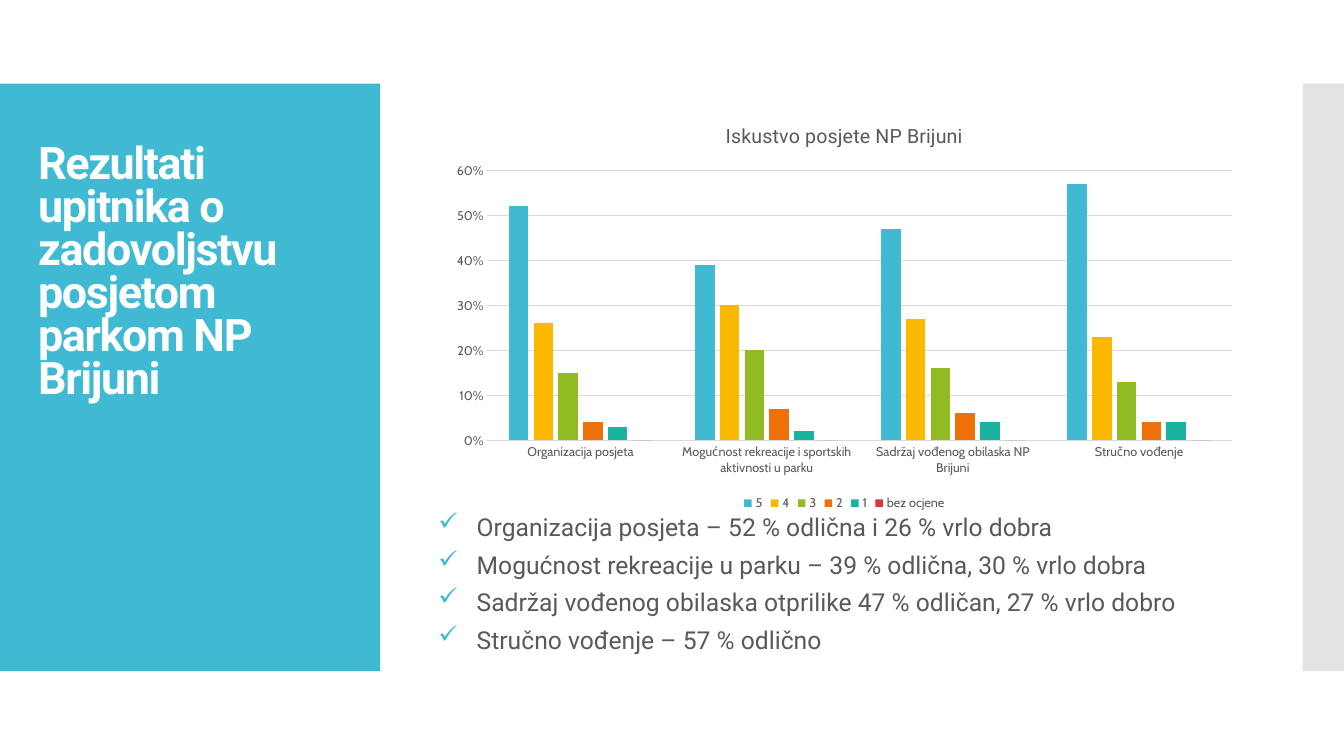
from dataclasses import dataclass

from lxml import etree
from pptx import Presentation
from pptx.chart import data as chart_data
from pptx.dml.color import RGBColor
from pptx.enum import chart as chart_enum, shapes, text
from pptx.oxml import ns
from pptx.util import Inches, Pt

COLORS = {
    "teal": "40BAD2", "yellow": "FAB900", "green": "90BB23", "orange": "EE7008",
    "sea": "1AB39F", "red": "D5393D", "edge": "C8C8C8", "grid": "D9D9D9",
    "body": "595959", "white": "FFFFFF", "black": "000000",
}


@dataclass(frozen=True)
class Panel:
    left: float
    width: float
    color: str
    alpha: int = 100


@dataclass(frozen=True)
class Rating:
    name: str
    shares: tuple[float, ...]
    color: str


PANELS = [Panel(0, 3.77, "teal"), Panel(12.92, 0.42, "edge", 50)]
TITLE = "Rezultati upitnika o zadovoljstvu posjetom parkom NP Brijuni"
TOPICS = [
    "Organizacija posjeta",
    "Mogućnost rekreacije i sportskih aktivnosti u parku",
    "Sadržaj vođenog obilaska NP Brijuni",
    "Stručno vođenje",
]
RATINGS = [
    Rating("5", (0.52, 0.39, 0.47, 0.57), "teal"),
    Rating("4", (0.26, 0.30, 0.27, 0.23), "yellow"),
    Rating("3", (0.15, 0.20, 0.16, 0.13), "green"),
    Rating("2", (0.04, 0.07, 0.06, 0.04), "orange"),
    Rating("1", (0.03, 0.02, 0.04, 0.04), "sea"),
    Rating("bez ocjene", (0, 0, 0, 0), "red"),
]
FINDINGS = [
    "Organizacija posjeta – 52 % odlična i 26 % vrlo dobra",
    "Mogućnost rekreacije u parku – 39 % odlična, 30 % vrlo dobra",
    "Sadržaj vođenog obilaska otprilike 47 % odličan, 27 % vrlo dobro",
    "Stručno vođenje – 57 % odlično",
]


def rgb(color: str) -> RGBColor:
    return RGBColor.from_string(COLORS[color])


def set_font(font, name: str, size: float, color: str, bold: bool = False) -> None:
    font.name, font.size, font.bold = name, Pt(size), bold
    font.color.rgb = rgb(color)


def add_panel(slide, panel: Panel) -> None:
    band = slide.shapes.add_shape(
        shapes.MSO_SHAPE.RECTANGLE, Inches(panel.left), Inches(0.83),
        Inches(panel.width), Inches(5.83))
    band.shadow.inherit = False
    band.fill.solid()
    band.fill.fore_color.rgb = rgb(panel.color)
    band.line.fill.background()
    if panel.alpha < 100:
        tint = band.fill._xPr.find(".//" + ns.qn("a:srgbClr"))
        etree.SubElement(tint, ns.qn("a:alpha"), val=str(panel.alpha * 1000))


def add_title(slide) -> None:
    heading = slide.shapes.add_textbox(
        Inches(0.28), Inches(1.23), Inches(3.22), Inches(2.82)).text_frame
    heading.word_wrap = True
    heading.vertical_anchor = text.MSO_ANCHOR.BOTTOM
    heading.text = TITLE
    paragraph = heading.paragraphs[0]
    paragraph.line_spacing = 0.8
    run = paragraph.runs[0]
    set_font(run.font, "Roboto", 32, "white", bold=True)
    run.font._element.set("spc", "-100")


def add_check(paragraph) -> None:
    properties = paragraph._p.get_or_add_pPr()
    properties.set("marL", str(Inches(0.38)))
    properties.set("indent", str(-Inches(0.38)))
    bullet_color = etree.SubElement(properties, ns.qn("a:buClr"))
    etree.SubElement(bullet_color, ns.qn("a:srgbClr"), val=COLORS["teal"])
    etree.SubElement(properties, ns.qn("a:buChar"), char="✓")


def add_findings(slide) -> None:
    findings = slide.shapes.add_textbox(
        Inches(4.25), Inches(5.11), Inches(8), Inches(1.55)).text_frame
    findings.word_wrap = True
    findings.text = "\n".join(FINDINGS)
    for index, paragraph in enumerate(findings.paragraphs):
        add_check(paragraph)
        paragraph.line_spacing = 0.7
        if index:
            paragraph.space_before = Pt(12)
        set_font(paragraph.runs[0].font, "Roboto", 17.6, "body")


def style_axis(axis) -> None:
    axis.major_tick_mark = axis.minor_tick_mark = chart_enum.XL_TICK_MARK.NONE
    set_font(axis.tick_labels.font, "Cabin", 9, "body")


def style_line(line) -> None:
    line.color.rgb = rgb("grid")
    line.width = Pt(0.75)


def add_ratings_chart(slide) -> None:
    ratings = chart_data.CategoryChartData(number_format="0%")
    ratings.categories = TOPICS
    for rating in RATINGS:
        ratings.add_series(rating.name, rating.shares)
    chart = slide.shapes.add_chart(
        chart_enum.XL_CHART_TYPE.COLUMN_CLUSTERED, Inches(4.37), Inches(1.04),
        Inches(8.01), Inches(4.07), ratings).chart
    set_font(chart.font, "Cabin", 10, "black")

    # Chart title and legend
    chart.has_title = True
    chart.chart_title.include_in_layout = False
    caption = chart.chart_title.text_frame
    caption.text = "Iskustvo posjete NP Brijuni"
    set_font(caption.paragraphs[0].runs[0].font, "Roboto", 14, "body")
    chart.has_legend = True
    chart.legend.position = chart_enum.XL_LEGEND_POSITION.BOTTOM
    chart.legend.include_in_layout = False
    set_font(chart.legend.font, "Cabin", 9, "body")

    # Axes
    topics, shares = chart.category_axis, chart.value_axis
    style_axis(topics)
    style_axis(shares)
    style_line(topics.format.line)
    shares.format.line.fill.background()
    shares.has_major_gridlines = True
    style_line(shares.major_gridlines.format.line)
    shares.minimum_scale, shares.maximum_scale, shares.major_unit = 0, 0.6, 0.1
    shares.tick_labels.number_format = "0%"
    shares.tick_labels.number_format_is_linked = False

    # Columns
    columns = chart.plots[0]
    columns.gap_width, columns.overlap = 219, -27
    columns.vary_by_categories = False
    for series, rating in zip(columns.series, RATINGS):
        series.format.fill.solid()
        series.format.fill.fore_color.rgb = rgb(rating.color)


def main() -> None:
    deck = Presentation()
    deck.slide_width, deck.slide_height = Inches(13.33), Inches(7.5)
    slide = deck.slides.add_slide(deck.slide_layouts[6])
    for panel in PANELS:
        add_panel(slide, panel)
    add_findings(slide)
    add_ratings_chart(slide)
    add_title(slide)
    deck.save("out.pptx")


if __name__ == "__main__":
    main()
